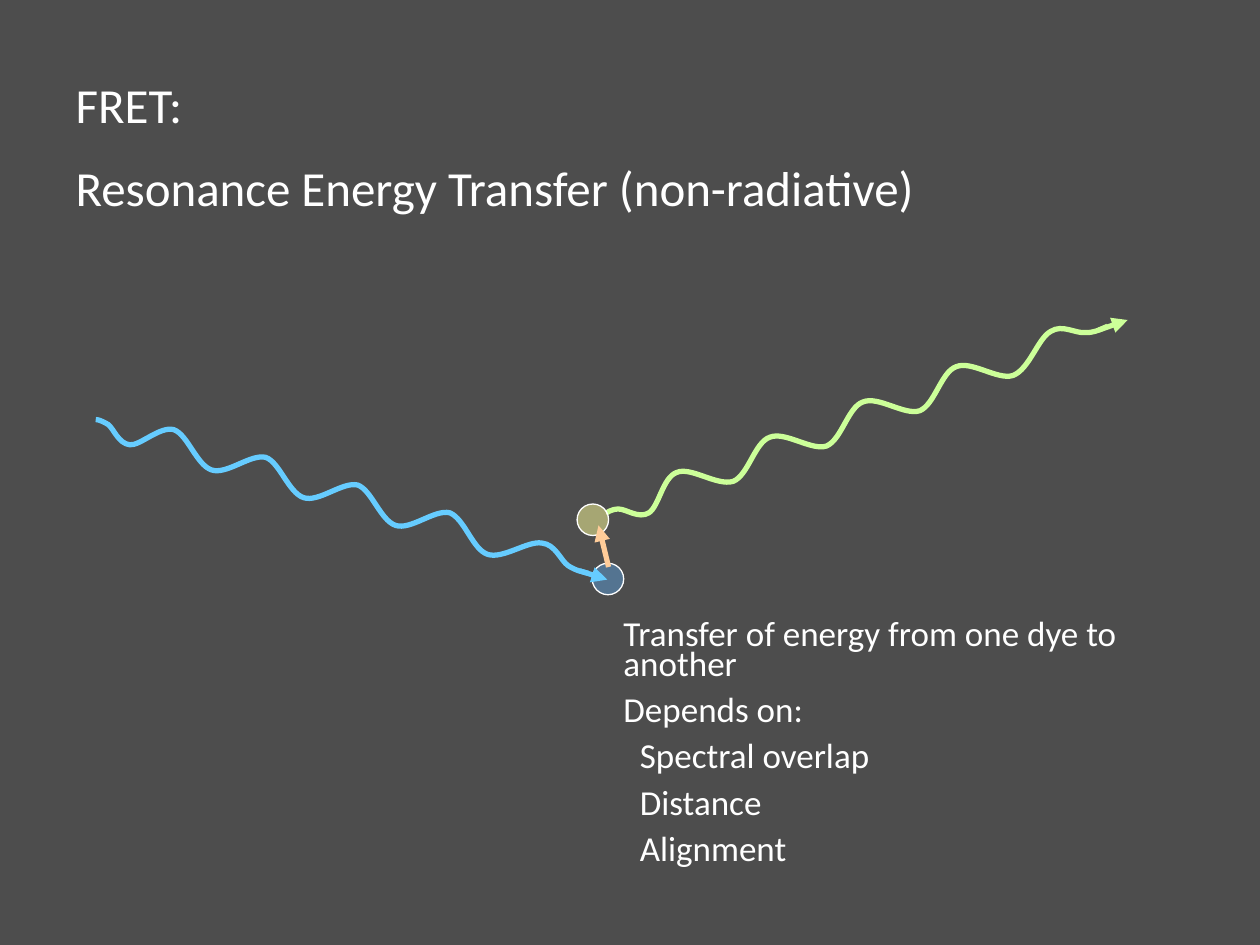
"""Build the FRET resonance energy transfer slide."""
from lxml.etree import SubElement
from pptx import Presentation
from pptx.dml.color import RGBColor
from pptx.enum.shapes import MSO_CONNECTOR, MSO_SHAPE
from pptx.enum.text import MSO_ANCHOR, MSO_AUTO_SIZE, PP_ALIGN
from pptx.oxml.ns import qn
from pptx.util import Inches, Pt

COLOURS = {
    "background": "4D4D4D",
    "white": "FFFFFF",
    "donor": "5B9BD5",
    "acceptor": "FFFF99",
    "excitation": "66CCFF",
    "emission": "CCFF99",
    "transfer": "FFCC99",
}
TITLE = ["FRET:", "Resonance Energy Transfer (non-radiative)"]
EXPLANATION = ["Transfer of energy from one dye to another", "Depends on:"]
FACTORS = ["Spectral overlap", "Distance", "Alignment"]
FRAME = {"word_wrap": True, "auto_size": MSO_AUTO_SIZE.NONE}
TITLE_FRAME = {**FRAME, "vertical_anchor": MSO_ANCHOR.TOP, "margin_top": Inches(0.09)}
BODY_FRAME = {**FRAME, "vertical_anchor": MSO_ANCHOR.MIDDLE}
TITLE_PARAGRAPH = {"alignment": PP_ALIGN.LEFT, "line_spacing": 1.0}
BODY_PARAGRAPH = {"alignment": PP_ALIGN.LEFT, "line_spacing": 0.7}
TITLE_FONT = {"name": "Calibri", "size": Pt(28), "bold": False}
BODY_FONT = {"name": "Calibri", "size": Pt(20), "bold": False}

EXCITATION = {
    "start": [(0.76, 3.33), (0.78, 3.33), (0.81, 3.34), (0.86, 3.37),
              (0.9, 3.4), (0.94, 3.52), (1.03, 3.53),
              (1.11, 3.54), (1.27, 3.38), (1.38, 3.41)],
    "cycle": [(0.11, 0.04), (0.18, 0.28), (0.3, 0.32),
              (0.42, 0.36), (0.61, 0.19), (0.73, 0.22)],
    "end": [(3.69, 4.12), (3.75, 4.36), (3.87, 4.4),
            (3.99, 4.44), (4.19, 4.29), (4.3, 4.31),
            (4.41, 4.32), (4.45, 4.45), (4.51, 4.49),
            (4.57, 4.53), (4.63, 4.54), (4.67, 4.55)],
}
EMISSION = {
    "start": [(4.81, 4.07), (4.82, 4.07), (4.85, 4.04), (4.91, 4.04),
              (4.97, 4.04), (5.07, 4.12), (5.15, 4.07),
              (5.23, 4.02), (5.26, 3.79), (5.37, 3.75),
              (5.48, 3.7), (5.69, 3.86), (5.82, 3.82)],
    "cycle": [(0.12, -0.05), (0.17, -0.31), (0.29, -0.35),
              (0.41, -0.4), (0.62, -0.24), (0.74, -0.28)],
    "end": [(8.17, 2.93), (8.24, 2.68), (8.34, 2.63),
            (8.43, 2.57), (8.54, 2.65), (8.62, 2.64),
            (8.7, 2.64), (8.76, 2.6), (8.79, 2.59)],
}


def rgb(role):
    """Return the colour of a role."""
    return RGBColor.from_string(COLOURS[role])


def apply(target, values):
    """Set each attribute in values on target."""
    for attribute, value in values.items():
        setattr(target, attribute, value)


def write_lines(frame, lines, paragraph_format, font_format, space, indents):
    """Fill a text frame with one formatted paragraph per line."""
    for index, (line, indent) in enumerate(zip(lines, indents)):
        paragraph = frame.paragraphs[0] if index == 0 else frame.add_paragraph()
        paragraph.text = line
        properties = paragraph._p.get_or_add_pPr()
        properties.set("marL", str(Inches(indent)))
        properties.set("indent", "0")
        apply(paragraph, {**paragraph_format, "space_before": space if index else Pt(0)})
        apply(paragraph.font, font_format)
        paragraph.font.color.rgb = rgb("white")


def add_title(slide):
    """Place and fill the title placeholder."""
    title = slide.shapes.title
    apply(title, {"left": Inches(0.5), "top": Inches(0.5),
                  "width": Inches(8.25), "height": Inches(1.99)})
    apply(title.text_frame, TITLE_FRAME)
    write_lines(title.text_frame, TITLE, TITLE_PARAGRAPH, TITLE_FONT, Pt(14), [0, 0])


def add_explanation(slide):
    """Add the explanation with its indented factors."""
    explanation = slide.shapes.add_textbox(
        Inches(4.85), Inches(4.82), Inches(4.74), Inches(2.19))
    apply(explanation.text_frame, BODY_FRAME)
    indents = [0] * len(EXPLANATION) + [0.13] * len(FACTORS)
    write_lines(explanation.text_frame, EXPLANATION + FACTORS,
                BODY_PARAGRAPH, BODY_FONT, Pt(9.6), indents)


def add_dye(slide, left, top, role):
    """Add a half-transparent dye circle."""
    dye = slide.shapes.add_shape(
        MSO_SHAPE.OVAL, Inches(left), Inches(top), Inches(0.25), Inches(0.25))
    dye.shadow.inherit = False
    dye.fill.solid()
    dye.fill.fore_color.rgb = rgb(role)
    tint = dye._element.spPr.find(qn("a:solidFill"))[0]
    SubElement(tint, qn("a:alpha"), val="50000")
    dye.line.color.rgb = rgb("white")
    dye.line.width = Pt(0.75)


def wave_points(wave, cycles=3):
    """Return the start, the repeated cycles and the end of a wave."""
    points = list(wave["start"])
    for _ in range(cycles):
        x, y = points[-1]
        points += [(x + dx, y + dy) for dx, dy in wave["cycle"]]
    return points + wave["end"]


def add_wave(slide, wave, role):
    """Add a light wave of cubic curves."""
    first, *rest = [(Inches(x), Inches(y)) for x, y in wave_points(wave)]
    builder = slide.shapes.build_freeform(*first)
    builder.add_line_segments(rest, close=False)
    light = builder.convert_to_shape()
    light.shadow.inherit = False
    light.fill.background()
    light.line.color.rgb = rgb(role)
    light.line.width = Pt(3)
    outline = light._element.spPr.find(".//" + qn("a:path"))
    segments = outline.findall(qn("a:lnTo"))
    for index in range(0, len(segments), 3):
        curve = SubElement(outline, qn("a:cubicBezTo"))
        for segment in segments[index:index + 3]:
            curve.append(segment[0])
            outline.remove(segment)


def add_arrow(slide, start, end, role):
    """Add a straight arrow with a triangular head."""
    arrow = slide.shapes.add_connector(
        MSO_CONNECTOR.STRAIGHT, *map(Inches, start + end))
    arrow.line.color.rgb = rgb(role)
    arrow.line.width = Pt(3)
    SubElement(arrow.line._get_or_add_ln(), qn("a:tailEnd"), type="triangle")
    SubElement(arrow._element.spPr, qn("a:effectLst"))


def main():
    """Build and save the slide."""
    presentation = Presentation()
    apply(presentation, {"slide_width": Inches(10), "slide_height": Inches(7.5)})
    slide = presentation.slides.add_slide(presentation.slide_layouts[5])
    slide.background.fill.solid()
    slide.background.fill.fore_color.rgb = rgb("background")
    add_title(slide)
    add_dye(slide, 4.7, 4.47, "donor")
    add_wave(slide, EXCITATION, "excitation")
    add_arrow(slide, (4.6, 4.53), (4.82, 4.6), "excitation")
    add_wave(slide, EMISSION, "emission")
    add_arrow(slide, (4.72 + 4, 2.62), (8.95, 2.54), "emission")
    add_explanation(slide)
    add_dye(slide, 4.58, 4, "acceptor")
    add_arrow(slide, (4.83, 4.5), (4.75, 4.17), "transfer")
    presentation.save("out.pptx")


if __name__ == "__main__":
    main()
